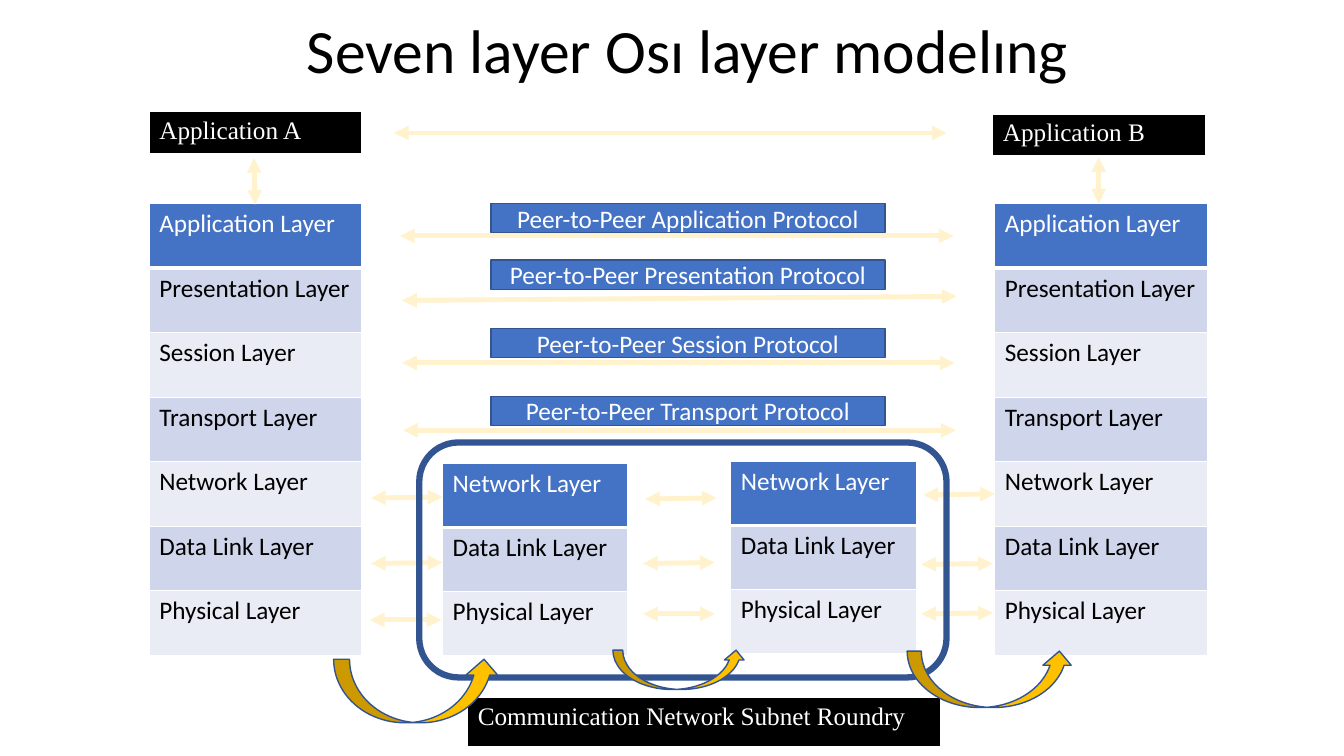
from lxml.etree import SubElement
from pptx import Presentation
from pptx.dml.color import RGBColor
from pptx.enum.shapes import MSO_CONNECTOR as Connector, MSO_SHAPE as Shape
from pptx.enum.text import MSO_ANCHOR as Anchor, PP_ALIGN as Align
from pptx.oxml.ns import qn
from pptx.util import Pt

WHITE, BLACK, BLUE, NAVY = "FFFFFF", "000000", "4472C4", "325491"
CREAM, GOLD, BANDS = "FFF2CC", "FFC000", ("E9EBF5", "CFD5EA")
LAYERS = ["Application Layer", "Presentation Layer", "Session Layer", "Transport Layer",
          "Network Layer", "Data Link Layer", "Physical Layer"]
LABELS = [("Application A", 106.6, 79.9, 152, 31),
          ("Application B", 709.2, 81.4, 152, 31),
          ("Communication Network Subnet Roundry", 334.1, 498.2, 337.7, 36)]
STACKS = [(LAYERS, 106.6, 145.5, 152, 46.1), (LAYERS, 710.6, 145.5, 152, 46.1),
          (LAYERS[4:], 316.1, 331.2, 132.5, 45.6), (LAYERS[4:], 522, 329.8, 132.5, 45.6)]
PEERS = [("Application", 145.4, (285.8, 168.5, 681.1, 168.5)),
         ("Presentation", 185.8, (287.3, 214.6, 683.3, 211.7)),
         ("Session", 234.7, (287.3, 259.2, 681.8, 259.2)),
         ("Transport", 283, (288, 307.4, 682.6, 307.4))]
HOPS = [(265, 355.7, 0.7), (265, 402.5, 0.7), (264.2, 442.8, 0),
        (460.8, 356.4, 0.7), (459.4, 402.5, 0.7), (459.4, 438.5, 0),
        (659.5, 353.5, 0.7), (658.1, 403.2, 0.7), (658.1, 438.5, 0.7)]
HOP_LENGTH = 51.1
APPLICATION_ARROWS = [(281.5, 95, 676.1, 95), (181.4, 113, 182.2, 146.2),
                      (784.8, 112.3, 784.8, 145.4)]
TRANSFERS = [(238.3, 470.9, 118.8, 45.4), (648, 465.1, 118.8, 40.3),
             (437.8, 464.4, 95, 28.1)]


def color(value):
    """Turn a hex string into a colour."""
    return RGBColor.from_string(value)


def write(frame, text, size, ink, font="Calibri", align=Align.LEFT):
    """Fill a text frame with one formatted paragraph."""
    frame.text = text
    para = frame.paragraphs[0]
    para.alignment = align
    for span in para.runs:
        span.font.size = Pt(size)
        span.font.name = font
        span.font.color.rgb = color(ink)


def add_title(page, text):
    """Add the slide heading."""
    box = page.shapes.add_textbox(Pt(101.5), Pt(-20.2), Pt(779.8), Pt(116.6))
    box.text_frame.word_wrap = True
    box.text_frame.vertical_anchor = Anchor.MIDDLE
    write(box.text_frame, text, 44, BLACK, align=Align.CENTER)
    box.text_frame.paragraphs[0].line_spacing = 0.9


def style_cell(cell, fill, bottom):
    """Give a cell white borders and a solid fill."""
    properties = cell._tc.get_or_add_tcPr()
    for side, width in (("L", 1), ("R", 1), ("T", 1), ("B", bottom)):
        border = SubElement(properties, qn(f"a:ln{side}"), w=str(Pt(width)))
        solid = SubElement(border, qn("a:solidFill"))
        SubElement(solid, qn("a:srgbClr"), val=WHITE)
    cell.fill.solid()
    cell.fill.fore_color.rgb = color(fill)


def add_stack(page, texts, left, top, width, row_height, head=BLUE, font="Calibri"):
    """Add a one-column table with a coloured first row and banded rows below."""
    table = page.shapes.add_table(len(texts), 1, Pt(left), Pt(top), Pt(width),
                                  Pt(row_height * len(texts))).table
    for index, text in enumerate(texts):
        table.rows[index].height = Pt(row_height)
        cell = table.cell(index, 0)
        first = index == 0
        style_cell(cell, head if first else BANDS[index % 2], 3 if first else 1)
        write(cell.text_frame, text, 18, WHITE if first else BLACK, font)


def add_arrow(page, x1, y1, x2, y2):
    """Add a double-headed line."""
    arrow = page.shapes.add_connector(Connector.STRAIGHT, Pt(x1), Pt(y1), Pt(x2), Pt(y2))
    arrow.line.color.rgb = color(CREAM)
    arrow.line.width = Pt(3.5)
    line = arrow.line._get_or_add_ln()
    for end in ("headEnd", "tailEnd"):
        SubElement(line, qn(f"a:{end}"), type="triangle")
    SubElement(arrow._element.spPr, qn("a:effectLst"))


def add_outlined(page, kind, left, top, width, height, fill=None, weight=1):
    """Add a navy-outlined preset shape, hollow unless a fill is given."""
    shape = page.shapes.add_shape(kind, Pt(left), Pt(top), Pt(width), Pt(height))
    shape.shadow.inherit = False
    if fill:
        shape.fill.solid()
        shape.fill.fore_color.rgb = color(fill)
    else:
        shape.fill.background()
    shape.line.color.rgb = color(NAVY)
    shape.line.width = Pt(weight)
    return shape


def add_protocol(page, name, top):
    """Add the box that names a peer protocol."""
    box = add_outlined(page, Shape.RECTANGLE, 350.6, top, 281.5, 20.9, BLUE)
    box.text_frame.word_wrap = True
    box.text_frame.vertical_anchor = Anchor.MIDDLE
    write(box.text_frame, f"Peer-to-Peer {name} Protocol", 18, WHITE, align=Align.CENTER)


def main():
    """Build the slide and save it."""
    deck = Presentation()
    deck.slide_width, deck.slide_height = Pt(960), Pt(540)
    page = deck.slides.add_slide(deck.slide_layouts[6])
    add_title(page, "Seven layer Osı layer modelıng")
    for stack in STACKS:
        add_stack(page, *stack)
    for x, y, rise in HOPS:
        add_arrow(page, x, y, x + HOP_LENGTH, y - rise)
    for name, top, ends in PEERS:
        add_arrow(page, *ends)
    add_outlined(page, Shape.ROUNDED_RECTANGLE, 299.5, 316.1, 376.6, 167.8, weight=4.5)
    for text, *place in LABELS:
        add_stack(page, [text], *place, head=BLACK, font="Times New Roman")
    for ends in APPLICATION_ARROWS:
        add_arrow(page, *ends)
    for place in TRANSFERS:
        add_outlined(page, Shape.CURVED_UP_ARROW, *place, fill=GOLD)
    for name, top, ends in PEERS:
        add_protocol(page, name, top)
    deck.save("out.pptx")


if __name__ == "__main__":
    main()
